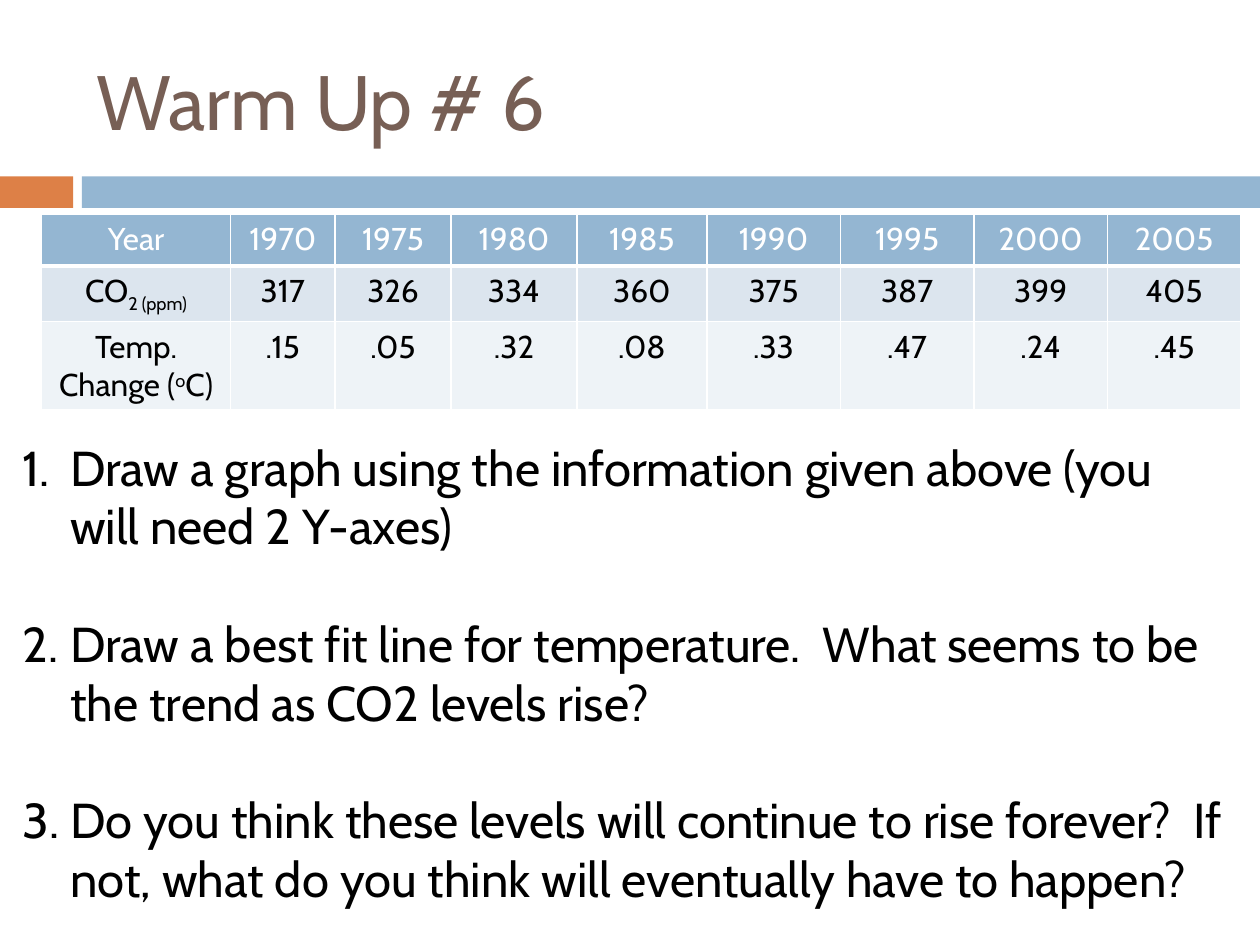
from lxml.etree import SubElement
from pptx import Presentation
from pptx.dml.color import RGBColor
from pptx.enum.shapes import MSO_SHAPE as Shape
from pptx.enum.text import MSO_ANCHOR as Anchor, PP_ALIGN as Align
from pptx.oxml.ns import qn
from pptx.util import Inches, Pt

TITLE = "Warm Up # 6"
BANDS = [(0, 0.58, "DD8047"), (0.65, 9.35, "94B6D2")]
YEARS = ["1970", "1975", "1980", "1985", "1990", "1995", "2000", "2005"]
CO2 = ["317", "326", "334", "360", "375", "387", "399", "405"]
TEMPERATURE = [".15", ".05", ".32", ".08", ".33", ".47", ".24", ".45"]
ROWS = [
    ([("Year", 0)], YEARS, "94B6D2", "FFFFFF"),
    ([("CO", 0), ("2 (ppm)", -25)], CO2, "DCE5EE", "000000"),
    ([("Temp. Change (", 0), ("o", 30), ("C)", 0)], TEMPERATURE, "EEF3F7", "000000"),
]
COLUMN_WIDTHS = [1.5, 0.83, 0.92, 1, 1.03] + [1.06] * 4
ROW_HEIGHT = 0.41
QUESTIONS = [
    "Draw a graph using the information given above (you will need 2 Y-axes)",
    "Draw a best fit line for temperature.  What seems to be the trend as CO2 levels rise?",
    "Do you think these levels will continue to rise forever?  If not, what do you think will eventually have to happen?",
]


def rgb(value):
    return RGBColor.from_string(value)


def add_text(paragraph, text, size, color, baseline=0):
    run = paragraph.add_run()
    run.text = text
    for name, value in {"name": "Cabin", "size": Pt(size)}.items():
        setattr(run.font, name, value)
    run.font.color.rgb = rgb(color)
    if baseline:
        run._r.get_or_add_rPr().set("baseline", str(baseline * 1000))


def add_frame(slide, left, top, width, height, anchor):
    box = slide.shapes.add_textbox(*map(Inches, (left, top, width, height)))
    for name, value in {"word_wrap": True, "vertical_anchor": anchor}.items():
        setattr(box.text_frame, name, value)
    return box.text_frame


def set_borders(cell, bottom_width):
    properties = cell._tc.get_or_add_tcPr()
    widths = {"a:lnL": 1, "a:lnR": 1, "a:lnT": 1, "a:lnB": bottom_width}
    for position, (side, width) in enumerate(widths.items()):
        border = SubElement(properties, qn(side), w=str(Pt(width)))
        fill = SubElement(border, qn("a:solidFill"))
        SubElement(fill, qn("a:srgbClr"), val="FFFFFF")
        properties.insert(position, border)


def add_bands(slide):
    for left, width, color in BANDS:
        band = slide.shapes.add_shape(
            Shape.RECTANGLE, *map(Inches, (left, 1.4, width, 0.25)))
        band.shadow.inherit = False
        band.fill.solid()
        band.fill.fore_color.rgb = rgb(color)
        band.line.fill.background()


def add_measurements(slide):
    table = slide.shapes.add_table(
        len(ROWS), len(COLUMN_WIDTHS), Inches(0.33), Inches(1.7),
        Inches(sum(COLUMN_WIDTHS)), Inches(ROW_HEIGHT * len(ROWS))).table
    for column, width in zip(table.columns, COLUMN_WIDTHS):
        column.width = Inches(width)
    for r, (label, values, fill, color) in enumerate(ROWS):
        table.rows[r].height = Inches(ROW_HEIGHT)
        contents = [label] + [[(value, 0)] for value in values]
        for c, parts in enumerate(contents):
            cell = table.cell(r, c)
            cell.fill.solid()
            cell.fill.fore_color.rgb = rgb(fill)
            set_borders(cell, 3 if r == 0 else 1)
            paragraph = cell.text_frame.paragraphs[0]
            paragraph.alignment = Align.CENTER
            for text, baseline in parts:
                add_text(paragraph, text, 18, color, baseline)


def add_questions(slide):
    frame = add_frame(slide, 0.08, 3.42, 9.75, 3.87, Anchor.TOP)
    indent = Inches(0.38)
    for number, question in enumerate(QUESTIONS):
        paragraph = frame.add_paragraph() if number else frame.paragraphs[0]
        if number:
            paragraph.space_before = Pt(33.5)
        properties = paragraph._p.get_or_add_pPr()
        for name, value in {"marL": indent, "indent": -indent}.items():
            properties.set(name, str(value))
        SubElement(properties, qn("a:buFont"), typeface="+mj-lt")
        SubElement(properties, qn("a:buAutoNum"), type="arabicPeriod")
        add_text(paragraph, question, 28, "000000")


def main():
    deck = Presentation()
    deck.slide_width, deck.slide_height = Inches(10), Inches(7.5)
    slide = deck.slides.add_slide(deck.slide_layouts[6])
    add_bands(slide)
    title = add_frame(slide, 0.67, 0.25, 8.92, 1.08, Anchor.MIDDLE)
    add_text(title.paragraphs[0], TITLE, 44, "775F55")
    add_measurements(slide)
    add_questions(slide)
    deck.save("out.pptx")


if __name__ == "__main__":
    main()
